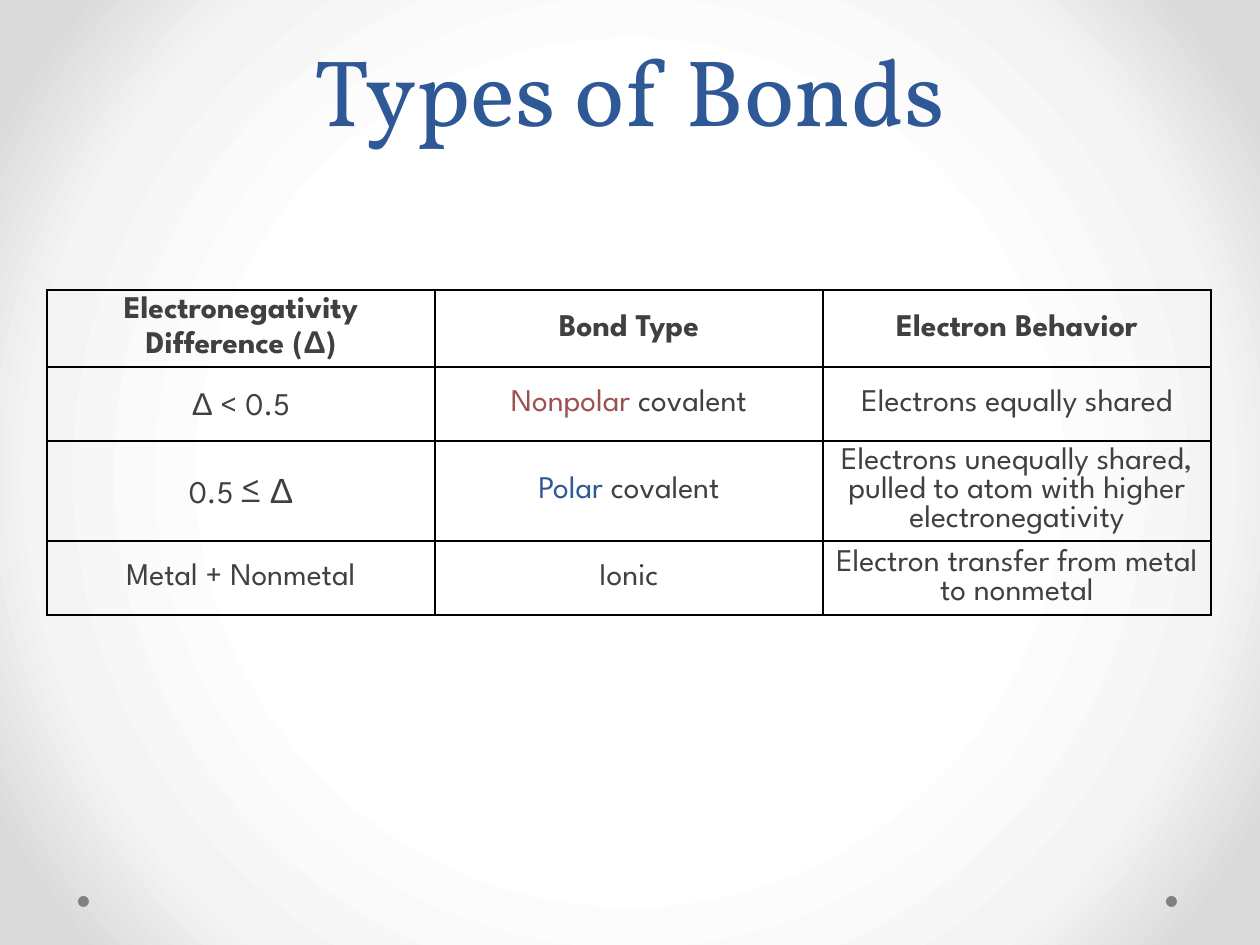
from lxml import etree
from pptx import Presentation
from pptx.dml.color import RGBColor
from pptx.enum.shapes import MSO_SHAPE
from pptx.enum.text import MSO_ANCHOR, PP_ALIGN
from pptx.oxml import parse_xml
from pptx.oxml.ns import nsdecls
from pptx.util import Pt

PX = 914400 // 126
CENTER, MIDDLE, BOTTOM = PP_ALIGN.CENTER, MSO_ANCHOR.MIDDLE, MSO_ANCHOR.BOTTOM
OVAL = MSO_SHAPE.OVAL
TITLE_FONT, BODY_FONT, SYMBOL_FONT = "Vollkorn", "League Spartan", "Arial"
COLORS = {"blue": "2F5897", "red": "9C5252", "text": "404040", "dot": "808080", "border": "000000"}
BACKGROUND_STOPS = [(50, "FFFFFF"), (76, "F4F4F4"), (92, "DADADA")]
ROW_HEIGHTS = [76, 74, 100, 74]
DELTA = ("Δ", {"font": SYMBOL_FONT})
BOND_ROWS = [
    [[("Electronegativity Difference (", {}), DELTA, (")", {})],
     [("Bond Type", {})],
     [("Electron Behavior", {})]],
    [[DELTA, (" < 0.5", {})],
     [("Nonpolar", {"color": "red"}), (" covalent", {})],
     [("Electrons equally shared", {})]],
    [[("0.5", {}), (" ≤ ", {"size": 20}), ("Δ", {"font": SYMBOL_FONT, "size": 20})],
     [("Polar", {"color": "blue"}), (" covalent", {})],
     [("Electrons unequally shared, pulled to atom with higher electronegativity", {})]],
    [[("Metal + Nonmetal", {})],
     [("Ionic", {})],
     [("Electron transfer from metal to nonmetal", {})]],
]


def rgb(name):
    """Return the named colour."""
    return RGBColor.from_string(COLORS[name])


def scale(*lengths):
    """Turn px lengths into EMU."""
    return [length * PX for length in lengths]


def set_background(slide):
    """Fill the slide with a gradient that darkens outward from its centre."""
    stops = "".join(
        f'<a:gs pos="{position * 1000}"><a:srgbClr val="{color}"/></a:gs>'
        for position, color in BACKGROUND_STOPS)
    background = parse_xml(
        f'<p:bg {nsdecls("p", "a")}><p:bgPr><a:gradFill rotWithShape="1">'
        f'<a:gsLst>{stops}</a:gsLst><a:path path="circle">'
        '<a:fillToRect l="50000" t="50000" r="50000" b="50000"/></a:path>'
        '</a:gradFill><a:effectLst/></p:bgPr></p:bg>')
    slide.element.cSld.insert(0, background)


def add_dots(slide, left, top, span, size):
    """Place one dot at each end of a horizontal span."""
    for dot_left in (left, left + span - size):
        dot = slide.shapes.add_shape(OVAL, *scale(dot_left, top, size, size))
        dot.shadow.inherit = False
        dot.fill.solid()
        dot.fill.fore_color.rgb = rgb("dot")
        dot.line.fill.background()


def set_title(slide, left, top, width, height):
    """Place and format the slide title."""
    title = slide.shapes.title
    title.left, title.top, title.width, title.height = scale(left, top, width, height)
    frame = title.text_frame
    frame.text = "Types of Bonds"
    frame.vertical_anchor = BOTTOM
    paragraph = frame.paragraphs[0]
    paragraph.alignment = CENTER
    paragraph.line_spacing = Pt(58)
    paragraph.font.name = TITLE_FONT
    paragraph.font.size = Pt(54)
    paragraph.font.color.rgb = rgb("blue")


def set_borders(cell):
    """Draw a thin line on every side of a cell."""
    properties = cell._tc.get_or_add_tcPr()
    for index, side in enumerate("LRTB"):
        line = parse_xml(
            f'<a:ln{side} {nsdecls("a")} w="12700"><a:solidFill>'
            f'<a:srgbClr val="{COLORS["border"]}"/></a:solidFill></a:ln{side}>')
        properties.insert(index, line)


def fill_cell(cell, runs, bold):
    """Write styled runs into a centred cell without a fill."""
    cell.fill.background()
    cell.vertical_anchor = MIDDLE
    set_borders(cell)
    paragraph = cell.text_frame.paragraphs[0]
    paragraph.alignment = CENTER
    for text, style in runs:
        run = paragraph.add_run()
        run.text = text
        run.font.name = style.get("font", BODY_FONT)
        run.font.size = Pt(style.get("size", 18))
        run.font.bold = bold
        run.font.color.rgb = rgb(style.get("color", "text"))


def add_bond_table(slide, left, top, width):
    """Add the table that compares the bond types."""
    column_count = len(BOND_ROWS[0])
    frame = slide.shapes.add_table(
        len(BOND_ROWS), column_count, *scale(left, top, width, sum(ROW_HEIGHTS)))
    table = frame.table
    table.first_row = table.horz_banding = False
    for column in table.columns:
        column.width = width * PX // column_count
    for row_index, (height, cells) in enumerate(zip(ROW_HEIGHTS, BOND_ROWS)):
        table.rows[row_index].height = height * PX
        for column_index, runs in enumerate(cells):
            fill_cell(table.cell(row_index, column_index), runs, row_index == 0)


def main():
    """Build and save the presentation."""
    presentation = Presentation()
    presentation.slide_width, presentation.slide_height = scale(1260, 945)
    slide = presentation.slides.add_slide(presentation.slide_layouts[5])
    set_background(slide)
    add_dots(slide, 78, 896, 1099, 11)
    set_title(slide, 63, 0, 1134, 152)
    add_bond_table(slide, 47, 290, 1164)
    presentation.save("out.pptx")


if __name__ == "__main__":
    main()
